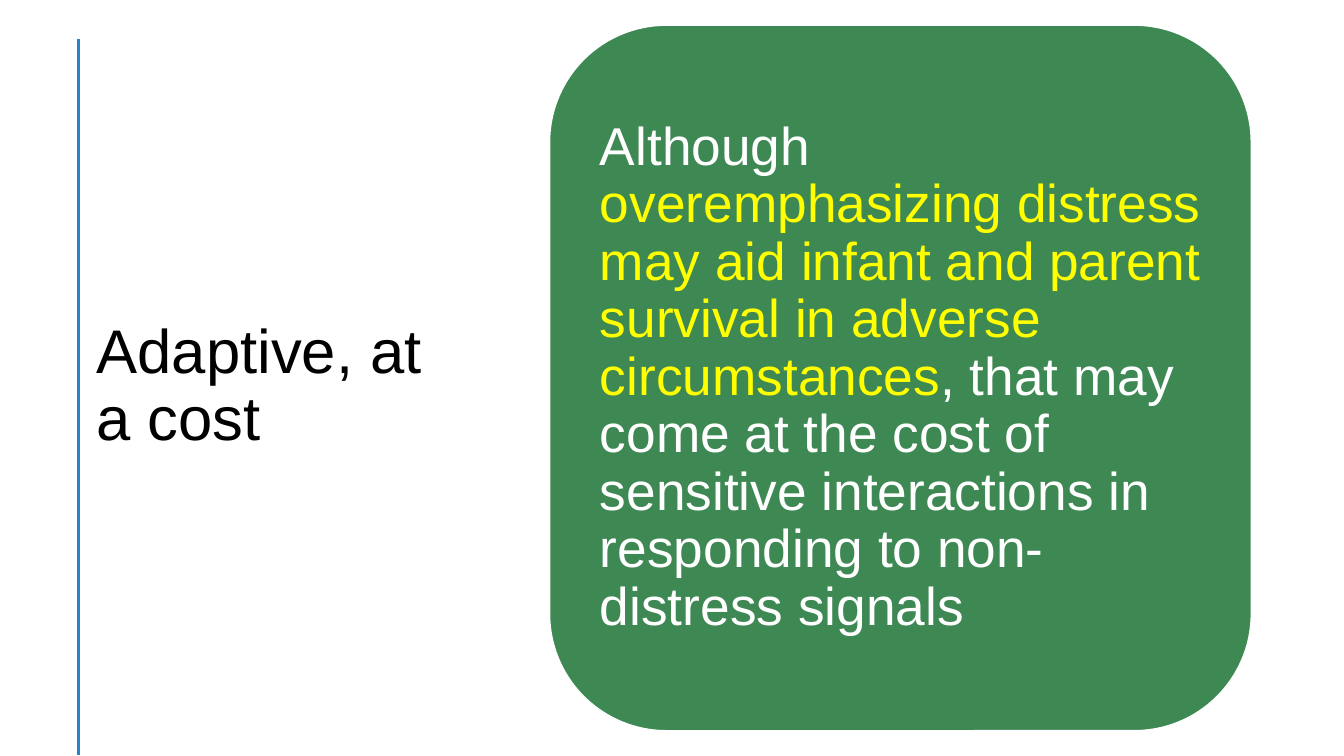
from dataclasses import dataclass

import pptx
import pptx.dml.color
import pptx.enum.shapes
import pptx.enum.text
import pptx.util
import lxml.etree

SLIDE_WIDTH, SLIDE_HEIGHT = 13.33, 7.5


@dataclass(frozen=True)
class Theme:
    font: str = "Arial"
    title_size: int = 44
    body_size: int = 38
    line_spacing: float = 0.9
    rule: str = "2683C6"
    panel: str = "3E8853"
    dark: str = "000000"
    light: str = "FFFFFF"
    highlight: str = "FFFF00"


@dataclass(frozen=True)
class Area:
    """A rectangle in percent of the slide's width and height."""
    left: float
    top: float
    width: float
    height: float

    def lengths(self) -> tuple:
        return (across(self.left), down(self.top),
                across(self.width), down(self.height))


@dataclass(frozen=True)
class TextBlock:
    area: Area
    size: int
    insets: tuple  # left, top, right, bottom in inches
    pieces: tuple  # (text, colour) pairs


def across(percent: float) -> int:
    return pptx.util.Inches(SLIDE_WIDTH * percent / 100)


def down(percent: float) -> int:
    return pptx.util.Inches(SLIDE_HEIGHT * percent / 100)


def colour(value: str) -> pptx.dml.color.RGBColor:
    return pptx.dml.color.RGBColor.from_string(value)


THEME = Theme()
PANEL = Area(40.89, 3.33, 52.21, 93.33)
RULE = Area(5.85, 5.2, 0, 94.67)

TEXT_BLOCKS = (
    TextBlock(Area(6.45, 12.27, 28.81, 77.87), THEME.title_size,
              (0.1, 0.05, 0.1, 0.05),
              (("Adaptive, at a cost", THEME.dark),)),
    TextBlock(Area(43.44, 7.87, 47.11, 84.27), THEME.body_size,
              (0.16, 0.16, 0.12, 0.16),
              (("Although ", THEME.light),
               ("overemphasizing distress may aid infant and parent survival "
                "in adverse circumstances", THEME.highlight),
               (", that may come at the cost of sensitive interactions in "
                "responding to non-distress signals", THEME.light))),
)


def draw_rule(slide: pptx.slide.Slide, area: Area) -> None:
    left, top, width, height = area.lengths()
    rule = slide.shapes.add_connector(
        pptx.enum.shapes.MSO_CONNECTOR.STRAIGHT,
        left, top, left + width, top + height)
    rule.line.color.rgb = colour(THEME.rule)
    rule.line.width = pptx.util.Pt(2)
    lxml.etree.SubElement(rule._element.spPr, pptx.oxml.ns.qn("a:effectLst"))


def draw_panel(slide: pptx.slide.Slide, area: Area) -> None:
    panel = slide.shapes.add_shape(
        pptx.enum.shapes.MSO_SHAPE.ROUNDED_RECTANGLE, *area.lengths())
    panel.shadow.inherit = False
    panel.fill.solid()
    panel.fill.fore_color.rgb = colour(THEME.panel)
    panel.line.color.rgb = colour(THEME.light)
    panel.line.width = pptx.util.Pt(1)


def draw_text(slide: pptx.slide.Slide, block: TextBlock) -> None:
    text_frame = slide.shapes.add_textbox(*block.area.lengths()).text_frame
    text_frame.word_wrap = True
    text_frame.vertical_anchor = pptx.enum.text.MSO_ANCHOR.MIDDLE
    (text_frame.margin_left, text_frame.margin_top, text_frame.margin_right,
     text_frame.margin_bottom) = map(pptx.util.Inches, block.insets)
    paragraph = text_frame.paragraphs[0]
    paragraph.line_spacing = THEME.line_spacing
    for text, text_colour in block.pieces:
        run = paragraph.add_run()
        run.text = text
        run.font.name = THEME.font
        run.font.size = pptx.util.Pt(block.size)
        run.font.color.rgb = colour(text_colour)


def main() -> None:
    presentation = pptx.Presentation()
    presentation.slide_width = across(100)
    presentation.slide_height = down(100)
    slide = presentation.slides.add_slide(presentation.slide_layouts[6])

    # Rule beside the title, then the panel behind the statement
    draw_rule(slide, RULE)
    draw_panel(slide, PANEL)

    # Title and statement
    for block in TEXT_BLOCKS:
        draw_text(slide, block)

    presentation.save("out.pptx")


if __name__ == "__main__":
    main()
